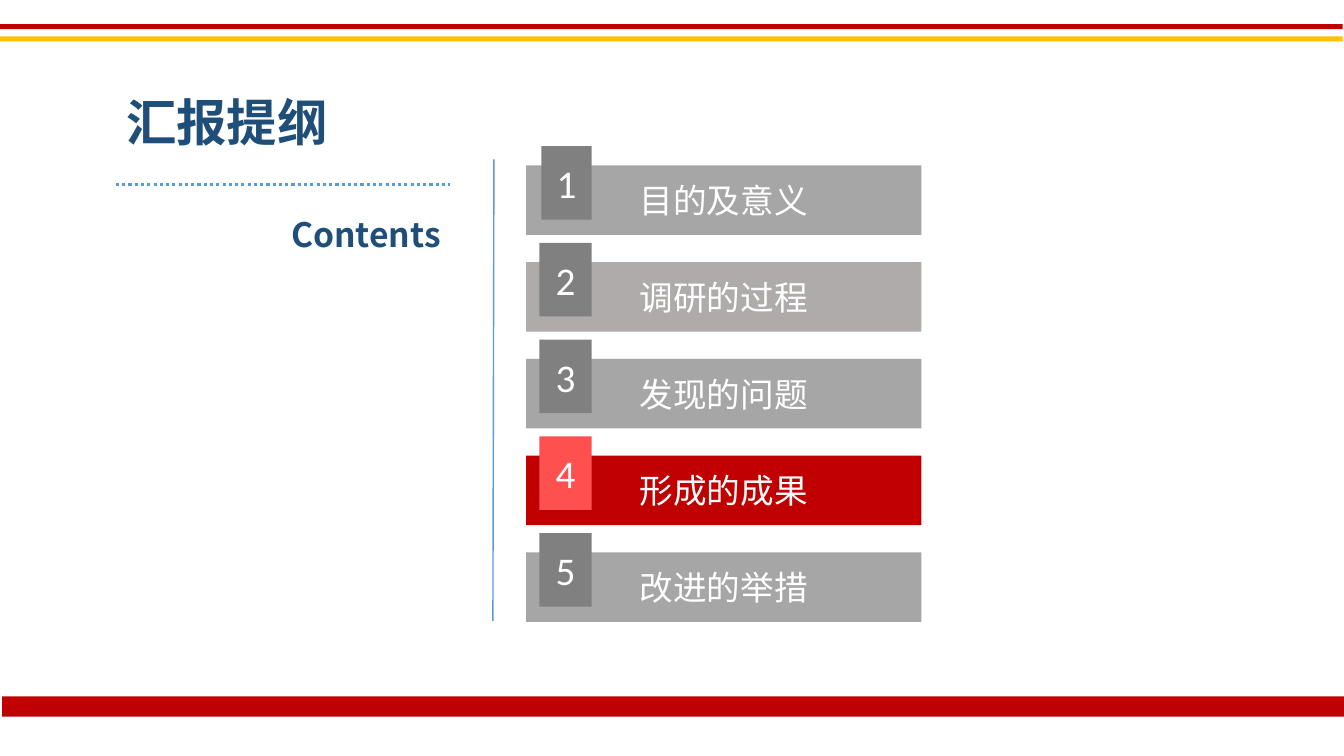
import pptx
import pptx.dml.color
import pptx.enum.dml
import pptx.enum.shapes
import pptx.enum.text
import pptx.oxml.ns
import pptx.util
from lxml import etree

RGBColor = pptx.dml.color.RGBColor
WHITE = RGBColor(0xFF, 0xFF, 0xFF)
RED = RGBColor(0xC0, 0x00, 0x00)
CORAL = RGBColor(0xFF, 0x50, 0x50)
GOLD = RGBColor(0xFF, 0xC0, 0x00)
NAVY = RGBColor(0x1F, 0x4E, 0x79)
BLUE = RGBColor(0x5B, 0x9B, 0xD5)
GREY = RGBColor(0xA6, 0xA6, 0xA6)
WARM_GREY = RGBColor(0xAF, 0xAB, 0xAB)
DARK_GREY = RGBColor(0x80, 0x80, 0x80)

ALIGN = pptx.enum.text.PP_ALIGN
GRID = pptx.util.Inches(0.1)
COLUMNS, ROWS = 133.33, 75
CJK_FONT, DIGIT_FONT = "Noto Sans CJK SC", "Calibri"

SECTIONS = [
    ("目的及意义", GREY, DARK_GREY),
    ("调研的过程", WARM_GREY, DARK_GREY),
    ("发现的问题", GREY, DARK_GREY),
    ("形成的成果", RED, CORAL),
    ("改进的举措", GREY, DARK_GREY),
]
FIRST_ROW, ROW_STEP = 16.4, 9.6


class AgendaPage:
    """Draws styled elements on one slide, measured in grid columns and rows."""

    def __init__(self, deck):
        self.page = deck.slides.add_slide(deck.slide_layouts[5])

    def cells(self, *lengths):
        return [round(length * GRID) for length in lengths]

    def label(self, shape, text, size, color, align, font=CJK_FONT, bold=False):
        frame = shape.text_frame
        frame.word_wrap = True
        frame.text = text
        para = frame.paragraphs[0]
        para.alignment = align
        para.font.name = font
        para.font.size = pptx.util.Pt(size)
        para.font.bold = bold
        para.font.color.rgb = color
        latin = para.font._element.find(pptx.oxml.ns.qn("a:latin"))
        east_asian = etree.Element(pptx.oxml.ns.qn("a:ea"), typeface=font)
        latin.addnext(east_asian)

    def heading(self, shape, text, size, align):
        self.label(shape, text, size, NAVY, align, bold=True)
        shape.text_frame.auto_size = pptx.enum.text.MSO_AUTO_SIZE.SHAPE_TO_FIT_TEXT
        shape.text_frame.vertical_anchor = pptx.enum.text.MSO_ANCHOR.TOP

    def title(self, text, *place):
        box = self.page.shapes.title
        box.left, box.top, box.width, box.height = self.cells(*place)
        self.heading(box, text, 36, ALIGN.LEFT)

    def subtitle(self, text, *place):
        box = self.page.shapes.add_textbox(*self.cells(*place))
        self.heading(box, text, 24, ALIGN.RIGHT)

    def block(self, fill, *place):
        box = self.page.shapes.add_shape(
            pptx.enum.shapes.MSO_SHAPE.RECTANGLE, *self.cells(*place))
        box.shadow.inherit = False
        box.fill.solid()
        box.fill.fore_color.rgb = fill
        box.line.fill.background()
        box.text_frame.vertical_anchor = pptx.enum.text.MSO_ANCHOR.MIDDLE
        return box

    def rule(self, width, *ends, dash=None):
        line = self.page.shapes.add_connector(
            pptx.enum.shapes.MSO_CONNECTOR.STRAIGHT, *self.cells(*ends))
        line.line.color.rgb = BLUE
        line.line.width = pptx.util.Pt(width)
        if dash:
            line.line.dash_style = dash
        etree.SubElement(line._element.spPr, pptx.oxml.ns.qn("a:effectLst"))

    def section(self, number, text, bar_fill, tab_fill):
        top = FIRST_ROW + (number - 1) * ROW_STEP
        bar = self.block(bar_fill, 52.2, top, 39.2, 6.9)
        self.label(bar, text, 24, WHITE, ALIGN.CENTER)
        tab_left, tab_width = (53.7, 5) if number == 1 else (53.5, 5.2)
        tab = self.block(tab_fill, tab_left, top - 1.9, tab_width, 7.3)
        self.label(tab, str(number), 28, WHITE, ALIGN.CENTER, font=DIGIT_FONT)


def main():
    deck = pptx.Presentation()
    deck.slide_width = round(COLUMNS * GRID)
    deck.slide_height = ROWS * GRID

    agenda = AgendaPage(deck)
    agenda.rule(2.25, 11.5, 18.3, 44.6, 18.3,
                dash=pptx.enum.dml.MSO_LINE.ROUND_DOT)
    agenda.title("汇报提纲", 11.5, 8.5, 28.2, 7.1)
    agenda.subtitle("Contents", 16.5, 20.7, 28.2, 5.1)
    agenda.rule(1, 49, 15.8, 48.9, 61.6)
    for number, section in enumerate(SECTIONS, 1):
        agenda.section(number, *section)
    agenda.block(RED, 0.2, 69.1, 133.2, 2)
    agenda.block(GOLD, 0, 3.6, 133.2, 0.5)
    agenda.block(RED, 0, 2.4, 133.2, 0.5)

    deck.save("out.pptx")


if __name__ == "__main__":
    main()
